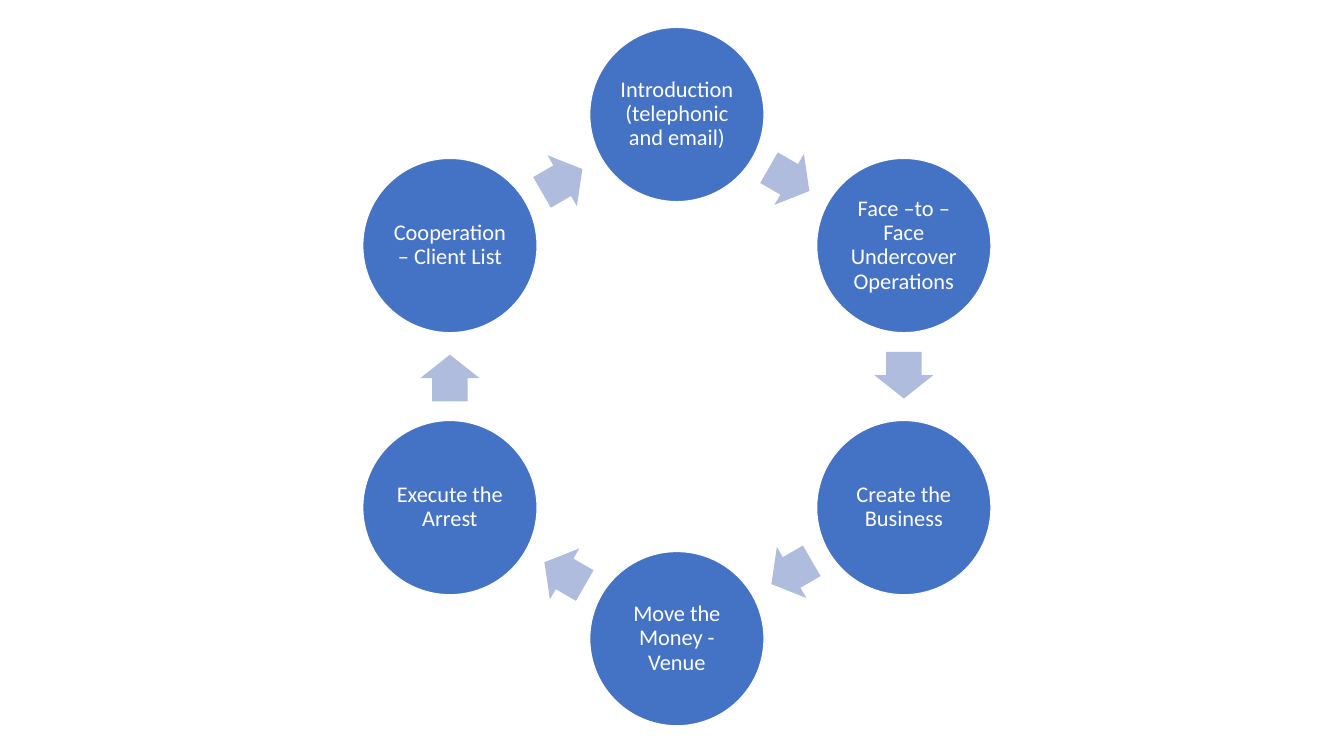
import math
import pptx
import pptx.util
import pptx.dml.color
import pptx.enum.shapes
import pptx.enum.text

Pt = pptx.util.Pt
Kind = pptx.enum.shapes.MSO_SHAPE

STEPS = [
    "Introduction (telephonic and email)",
    "Face –to – Face Undercover Operations",
    "Create the Business",
    "Move the Money - Venue",
    "Execute the Arrest",
    "Cooperation – Client List",
]
DISC = 124.6
LONG, WIDE = 33.3, 42
BACK = 1


def color(text):
    return pptx.dml.color.RGBColor.from_string(text)


def place(slide, kind, x, y, width, height, fill):
    shape = slide.shapes.add_shape(
        kind, Pt(x - width / 2), Pt(y - height / 2), Pt(width), Pt(height))
    shape.shadow.inherit = False
    shape.fill.solid()
    shape.fill.fore_color.rgb = color(fill)
    return shape


def add_step(slide, x, y, label):
    disc = place(slide, Kind.OVAL, x, y, DISC, DISC, "4472C4")
    disc.line.color.rgb = color("FFFFFF")
    disc.line.width = Pt(1)
    frame = disc.text_frame
    frame.word_wrap = True
    frame.vertical_anchor = pptx.enum.text.MSO_ANCHOR.MIDDLE
    frame.margin_left = frame.margin_right = Pt(1.2)
    frame.margin_top = frame.margin_bottom = Pt(1.2)
    frame.text = label
    para = frame.paragraphs[0]
    para.alignment = pptx.enum.text.PP_ALIGN.CENTER
    para.line_spacing = 0.9
    para.font.size = Pt(16)
    para.font.name = "Calibri"
    para.font.color.rgb = color("FFFFFF")


def add_arrow(slide, start, end):
    angle = math.atan2(end[1] - start[1], end[0] - start[0])
    x = (start[0] + end[0]) / 2 - BACK * math.cos(angle)
    y = (start[1] + end[1]) / 2 - BACK * math.sin(angle)
    arrow = place(slide, Kind.RIGHT_ARROW, x, y, LONG, WIDE, "B0BCDE")
    arrow.line.fill.background()
    arrow.adjustments[0] = 0.6
    arrow.adjustments[1] = 0.5
    arrow.rotation = round(math.degrees(angle)) % 360


def add_cycle(slide, left, top, size, labels):
    radius = (size - DISC) / 2
    turns = [math.tau * i / len(labels) for i in range(len(labels))]
    spots = [(left + size / 2 + radius * math.sin(turn),
              top + size / 2 - radius * math.cos(turn)) for turn in turns]
    for i, label in enumerate(labels):
        add_step(slide, *spots[i], label)
        add_arrow(slide, spots[i], spots[(i + 1) % len(spots)])


def main():
    deck = pptx.Presentation()
    deck.slide_width = Pt(960)
    deck.slide_height = Pt(540)
    slide = deck.slides.add_slide(deck.slide_layouts[6])
    add_cycle(slide, 234, 19.5, 499, STEPS)
    deck.save("out.pptx")


if __name__ == "__main__":
    main()
